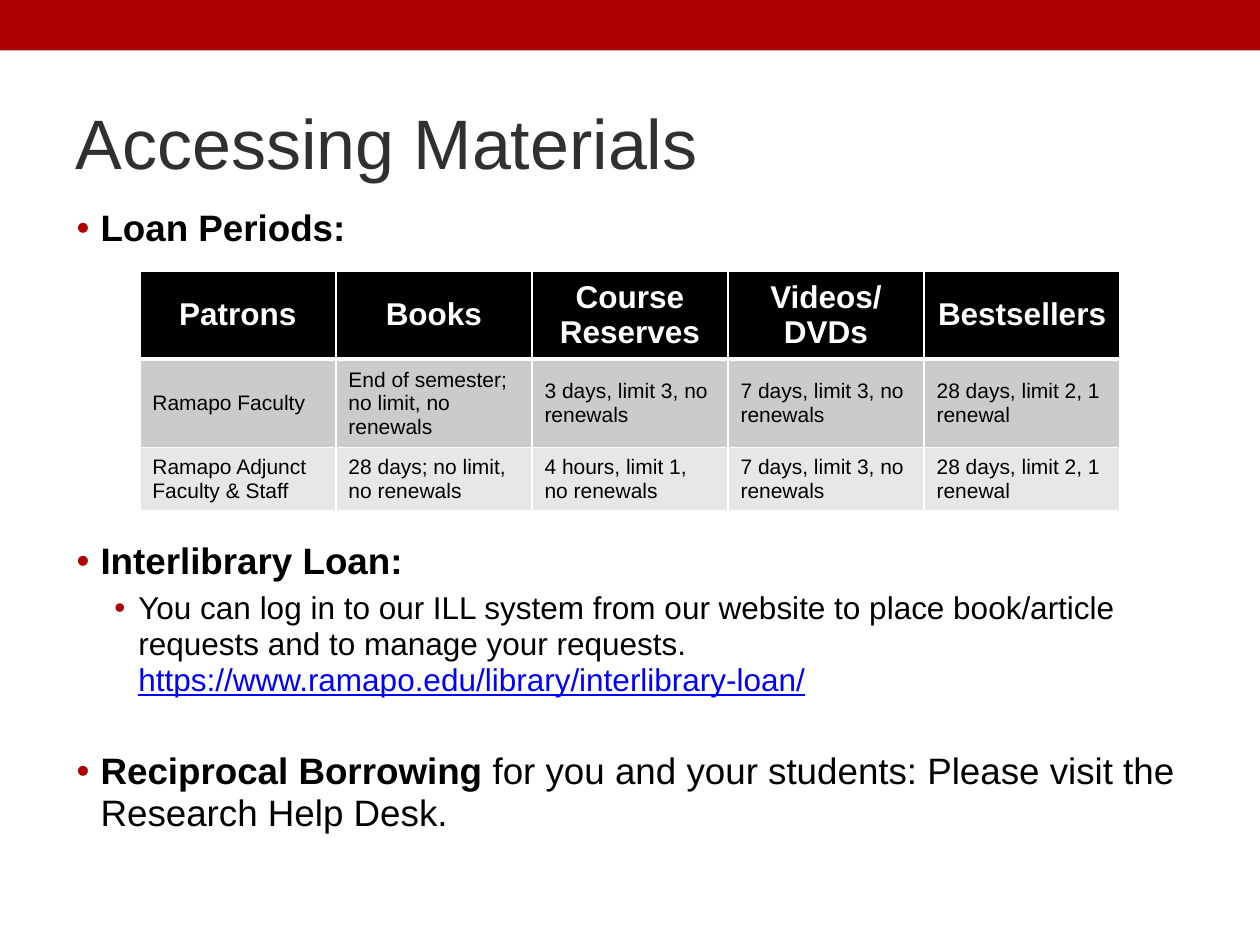
from lxml.etree import SubElement
from pptx import Presentation
from pptx.dml.color import RGBColor
from pptx.enum.shapes import MSO_SHAPE as Shape
from pptx.enum.text import MSO_ANCHOR as Anchor, PP_ALIGN as Align
from pptx.oxml.ns import qn
from pptx.util import Inches, Pt

COLORS = {"band": "AD0101", "title": "303030", "text": "000000", "link": "0000FF",
          "white": "FFFFFF", "head": "000000", "odd": "CBCBCB", "even": "E7E7E7"}
FONT = "Arial"
TITLE = "Accessing Materials"

# level, points of space before, runs of (text, style)
BULLETS = [
    (0, 0, [("Loan Periods:", "bold")]),
    (0, 166.5, [("Interlibrary Loan:", "bold")]),
    (1, 4.4, [("You can log in to our ILL system from our website to place "
               "book/article requests and to manage your requests. ", "plain"),
              ("https://www.ramapo.edu/library/interlibrary-loan/", "link")]),
    (0, 30, [("Reciprocal Borrowing", "bold"),
             (" for you and your students: Please visit the Research Help Desk.",
              "plain")]),
]
LEVELS = [{"size": 21, "indent": 0.2}, {"size": 18, "indent": 0.5}]
HANGING = 0.19

LOANS = [
    ["Patrons", "Books", "Course Reserves", "Videos/\nDVDs", "Bestsellers"],
    ["Ramapo Faculty", "End of semester; no limit, no renewals",
     "3 days, limit 3, no renewals", "7 days, limit 3, no renewals",
     "28 days, limit 2, 1 renewal"],
    ["Ramapo Adjunct Faculty & Staff", "28 days; no limit, no renewals",
     "4 hours, limit 1, no renewals", "7 days, limit 3, no renewals",
     "28 days, limit 2, 1 renewal"],
]
ROW_HEIGHTS = [0.7, 0.7, 0.5]
ROW_FILLS = ["head", "odd", "even"]


def rgb(name):
    return RGBColor.from_string(COLORS[name])


def add_span(para, text, size, color="text", bold=False, underline=False):
    span = para.add_run()
    span.text = text
    font = span.font
    font.name, font.size, font.bold = FONT, Pt(size), bold
    font.underline = underline
    font.color.rgb = rgb(color)


def add_bullet(para, indent):
    props = para._p.get_or_add_pPr()
    props.set("marL", str(Inches(indent)))
    props.set("indent", str(-Inches(HANGING)))
    color = SubElement(props, qn("a:buClr"))
    SubElement(color, qn("a:srgbClr"), val=COLORS["band"])
    SubElement(props, qn("a:buFont"), typeface=FONT)
    SubElement(props, qn("a:buChar"), char="•")


def set_borders(cell, top, bottom):
    """Draw white cell edges; the fill must be set afterwards."""
    props = cell._tc.get_or_add_tcPr()
    for tag, width in (("lnL", 1), ("lnR", 1), ("lnT", top), ("lnB", bottom)):
        line = SubElement(props, qn(f"a:{tag}"), w=str(Pt(width)))
        fill = SubElement(line, qn("a:solidFill"))
        SubElement(fill, qn("a:srgbClr"), val=COLORS["white"])


def add_band(page, width):
    band = page.shapes.add_shape(Shape.RECTANGLE, 0, 0, width, Inches(0.4))
    band.shadow.inherit = False
    band.fill.solid()
    band.fill.fore_color.rgb = rgb("band")
    band.line.fill.background()


def fill_title(page):
    title = page.shapes.title
    title.left, title.top = Inches(0.5), Inches(0.58)
    title.width, title.height = Inches(9), Inches(1.08)
    title.text_frame.vertical_anchor = Anchor.MIDDLE
    para = title.text_frame.paragraphs[0]
    para.alignment = Align.LEFT
    add_span(para, TITLE, 40, "title")


def add_body(page):
    box = page.shapes.add_textbox(Inches(0.5), Inches(1.6), Inches(9), Inches(5.6))
    frame = box.text_frame
    frame.word_wrap = True
    for index, (level, before, spans) in enumerate(BULLETS):
        para = frame.add_paragraph() if index else frame.paragraphs[0]
        look = LEVELS[level]
        para.level = level
        add_bullet(para, look["indent"])
        para.line_spacing = 0.95
        if before:
            para.space_before = Pt(before)
        for text, style in spans:
            linked = style == "link"
            add_span(para, text, look["size"], "link" if linked else "text",
                     style == "bold", linked)


def add_loans(page):
    rows, columns = len(LOANS), len(LOANS[0])
    table = page.shapes.add_table(rows, columns, Inches(1.11), Inches(2.15),
                                  Inches(7.78), Inches(sum(ROW_HEIGHTS))).table
    for r, texts in enumerate(LOANS):
        table.rows[r].height = Inches(ROW_HEIGHTS[r])
        header = r == 0
        for c, text in enumerate(texts):
            cell = table.cell(r, c)
            cell.vertical_anchor = Anchor.MIDDLE
            set_borders(cell, 3 if r == 1 else 1, 3 if header else 1)
            cell.fill.solid()
            cell.fill.fore_color.rgb = rgb(ROW_FILLS[r])
            frame = cell.text_frame
            for index, line in enumerate(text.split("\n")):
                para = frame.add_paragraph() if index else frame.paragraphs[0]
                para.alignment = Align.CENTER if header else Align.LEFT
                add_span(para, line, 18 if header else 12,
                         "white" if header else "text", header)


def main():
    deck = Presentation()
    deck.slide_width, deck.slide_height = Inches(10), Inches(7.5)
    page = deck.slides.add_slide(deck.slide_layouts[5])
    add_band(page, deck.slide_width)
    fill_title(page)
    add_body(page)
    add_loans(page)
    deck.save("out.pptx")


if __name__ == "__main__":
    main()
